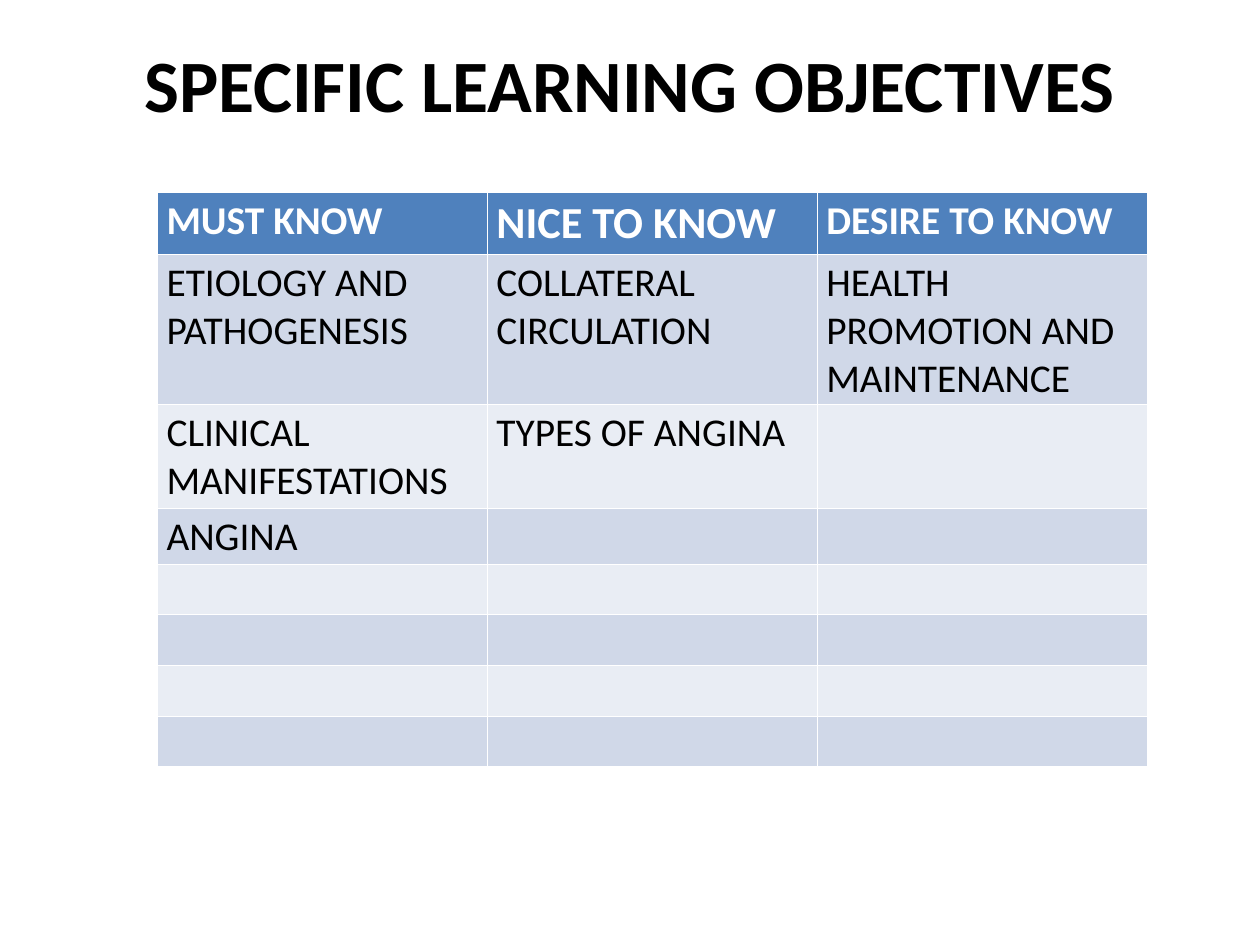
"""Build the learning objectives slide with its title and three-column table."""
import pptx
import pptx.dml.color
import pptx.enum.text
import pptx.util

Cm = pptx.util.Cm
FONT = "Calibri"
HEADINGS = [("MUST KNOW", 32), ("NICE TO KNOW", 36), ("DESIRE TO KNOW", 32)]
OBJECTIVES = [
    ["ETIOLOGY AND PATHOGENESIS", "COLLATERAL CIRCULATION", "HEALTH PROMOTION AND MAINTENANCE"],
    ["CLINICAL MANIFESTATIONS", "TYPES OF ANGINA"],
    ["ANGINA"],
]
ROW_COUNT = 8
HEADING_FILL = "4F81BD"
BAND_FILLS = ["E9EDF4", "D0D8E8"]


def color(hex_code):
    return pptx.dml.color.RGBColor.from_string(hex_code)


def write(para, text, size, hex_code, bold):
    para.text = text
    for span in para.runs:
        span.font.name = FONT
        span.font.size = pptx.util.Pt(size)
        span.font.bold = bold
        span.font.color.rgb = color(hex_code)


def add_title(page, text):
    box = page.shapes.title
    box.left, box.top, box.width, box.height = Cm(1.8), Cm(1.1), Cm(32.5), Cm(2.57)
    frame = box.text_frame
    frame.margin_left = frame.margin_top = frame.margin_right = frame.margin_bottom = 0
    frame.word_wrap = True
    frame.auto_size = pptx.enum.text.MSO_AUTO_SIZE.SHAPE_TO_FIT_TEXT
    para = frame.paragraphs[0]
    para.alignment = pptx.enum.text.PP_ALIGN.CENTER
    write(para, text, 60, "000000", True)


def fill_cell(cell, hex_code):
    cell.fill.solid()
    cell.fill.fore_color.rgb = color(hex_code)


def add_objectives_table(page):
    table = page.shapes.add_table(
        ROW_COUNT, len(HEADINGS), Cm(4.52), Cm(5.51), Cm(28.37), Cm(1.45 * ROW_COUNT)
    ).table
    for row_index, row in enumerate(table.rows):
        fill = BAND_FILLS[row_index % 2] if row_index else HEADING_FILL
        for cell in row.cells:
            fill_cell(cell, fill)
    for column, (heading, size) in enumerate(HEADINGS):
        write(table.cell(0, column).text_frame.paragraphs[0], heading, size, "FFFFFF", True)
    for row_index, objectives in enumerate(OBJECTIVES, start=1):
        for column, objective in enumerate(objectives):
            para = table.cell(row_index, column).text_frame.paragraphs[0]
            write(para, objective, 32, "000000", False)


def main():
    deck = pptx.Presentation()
    deck.slide_width, deck.slide_height = Cm(36.12), Cm(27.1)
    page = deck.slides.add_slide(deck.slide_layouts.get_by_name("Title Only"))
    add_title(page, "SPECIFIC LEARNING OBJECTIVES")
    add_objectives_table(page)
    deck.save("out.pptx")


if __name__ == "__main__":
    main()
